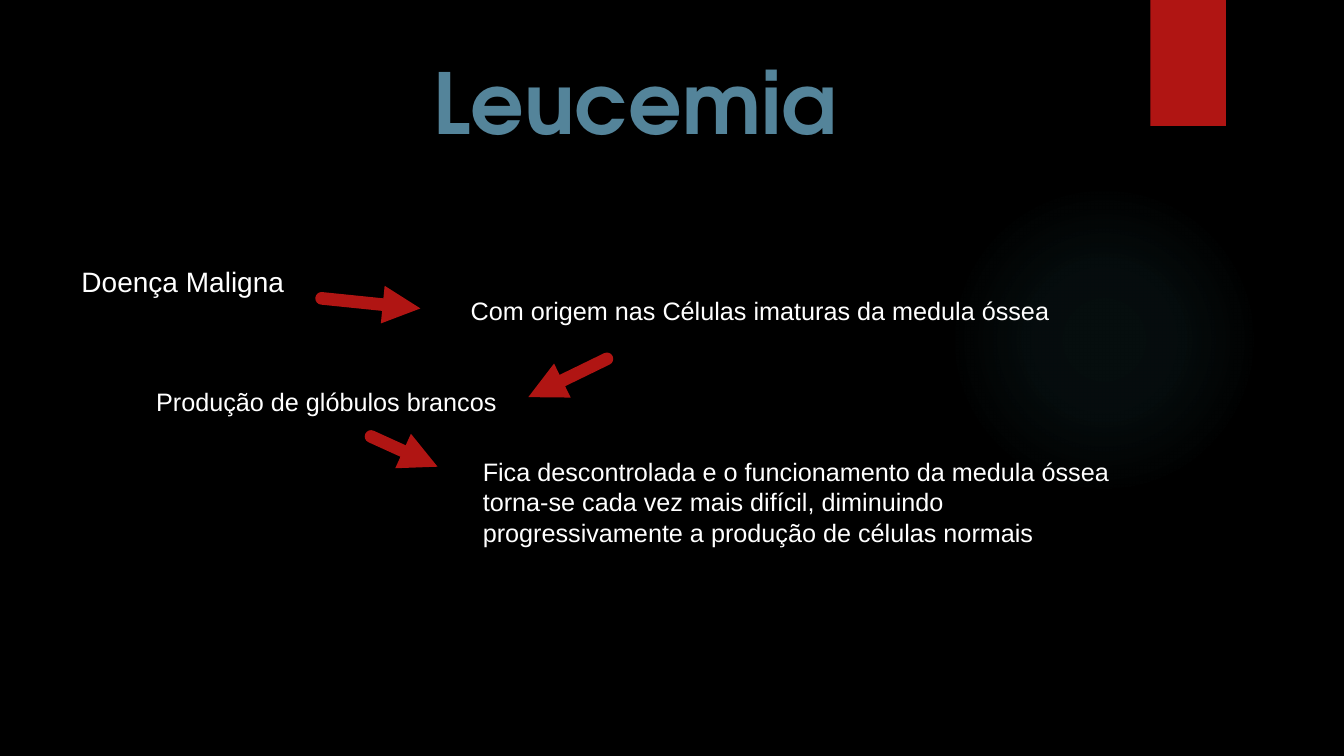
from dataclasses import dataclass

from lxml.etree import SubElement
from pptx import Presentation
from pptx.dml.color import RGBColor
from pptx.enum.shapes import MSO_CONNECTOR, MSO_SHAPE
from pptx.enum.text import MSO_AUTO_SIZE, PP_ALIGN
from pptx.oxml import parse_xml
from pptx.oxml.ns import nsdecls, qn
from pptx.util import Inches, Pt


@dataclass(frozen=True)
class Theme:
    background: str = "000000"
    accent: str = "B01513"
    title: str = "54849A"
    text: str = "FFFFFF"
    glow: str = "50B9C1"
    title_font: str = "TeX Gyre Adventor"
    body_font: str = "Arial"
    title_size: int = 60
    lead_size: int = 20
    body_size: int = 18
    arrow_width: int = 9


THEME = Theme()


def color(value):
    return RGBColor.from_string(value)


def inches(*values):
    return [Inches(v) for v in values]


def add_text(slide, box, text, size=THEME.body_size, font=THEME.body_font,
             fill=THEME.text, bold=False, align=PP_ALIGN.LEFT, wrap=False):
    tf = slide.shapes.add_textbox(*inches(*box)).text_frame
    tf.word_wrap = wrap
    tf.auto_size = MSO_AUTO_SIZE.SHAPE_TO_FIT_TEXT
    p = tf.paragraphs[0]
    p.alignment = align
    r = p.add_run()
    r.text = text
    r.font.name, r.font.size, r.font.bold = font, Pt(size), bold
    r.font.color.rgb = color(fill)


def add_plain_shape(slide, kind, box):
    s = slide.shapes.add_shape(kind, *inches(*box))
    s.shadow.inherit = False
    s.line.fill.background()
    return s


def add_arrow(slide, start, end):
    c = slide.shapes.add_connector(MSO_CONNECTOR.STRAIGHT, *inches(*start, *end))
    c.line.color.rgb = color(THEME.accent)
    c.line.width = Pt(THEME.arrow_width)
    ln = c.line._ln
    ln.set("cap", "rnd")
    SubElement(ln, qn("a:round"))
    SubElement(ln, qn("a:tailEnd"), type="triangle")
    SubElement(c._element.spPr, qn("a:effectLst"))


def add_glow(slide, box):
    """Faint radial light that fades out towards its rim."""
    s = add_plain_shape(slide, MSO_SHAPE.OVAL, box)
    s.fill.background()
    stops = "".join(
        f'<a:gs pos="{pos * 1000}"><a:srgbClr val="{THEME.glow}">'
        f'<a:alpha val="{alpha * 1000}"/></a:srgbClr></a:gs>'
        for pos, alpha in ((0, 7), (36, 6), (69, 0)))
    gradient = parse_xml(
        f'<a:gradFill {nsdecls("a")} rotWithShape="1"><a:gsLst>{stops}</a:gsLst>'
        '<a:path path="circle"><a:fillToRect l="50000" t="50000" r="50000" '
        'b="50000"/></a:path></a:gradFill>')
    sp_pr = s._element.spPr
    sp_pr.replace(sp_pr.find(qn("a:noFill")), gradient)


def add_backdrop(slide):
    fill = slide.background.fill
    fill.solid()
    fill.fore_color.rgb = color(THEME.background)
    add_glow(slide, (9.41, 1.83, 3.08, 3.08))
    tab = add_plain_shape(slide, MSO_SHAPE.RECTANGLE, (11.41, 0, 0.75, 1.25))
    tab.fill.solid()
    tab.fill.fore_color.rgb = color(THEME.accent)


def add_flow(slide, box):
    """Steps and the arrows between them, offset from the box's corner."""
    left, top, _, _ = box

    def at(x, y):
        return left + x, top + y

    # Steps
    add_text(slide, (*at(0, 0), 2.23, 0.44), "Doença Maligna", size=THEME.lead_size)
    add_text(slide, (*at(3.86, 0.3), 5.99, 0.4),
             "Com origem nas Células imaturas da medula óssea")
    add_text(slide, (*at(0.74, 1.2), 3.68, 0.4), "Produção de glóbulos brancos")
    add_text(slide, (*at(3.98, 1.9), 6.67, 1.31),
             "Fica descontrolada e o funcionamento da medula óssea torna-se cada "
             "vez mais difícil, diminuindo progressivamente a produção de células "
             "normais", wrap=True)

    # Arrows
    for start, end in (((2.48, 0.38), (3.46, 0.48)),
                       ((5.31, 0.98), (4.53, 1.36)),
                       ((2.97, 1.75), (3.63, 2.05))):
        add_arrow(slide, at(*start), at(*end))


def main():
    prs = Presentation()
    prs.slide_width, prs.slide_height = inches(13.33, 7.5)
    slide = prs.slides.add_slide(prs.slide_layouts[6])
    add_backdrop(slide)
    add_text(slide, (4.18, 0.45, 4.24, 1.11), "Leucemia", size=THEME.title_size,
             font=THEME.title_font, fill=THEME.title, bold=True,
             align=PP_ALIGN.CENTER)
    add_flow(slide, (0.71, 2.58, 10.65, 3.21))
    prs.save("out.pptx")


if __name__ == "__main__":
    main()
